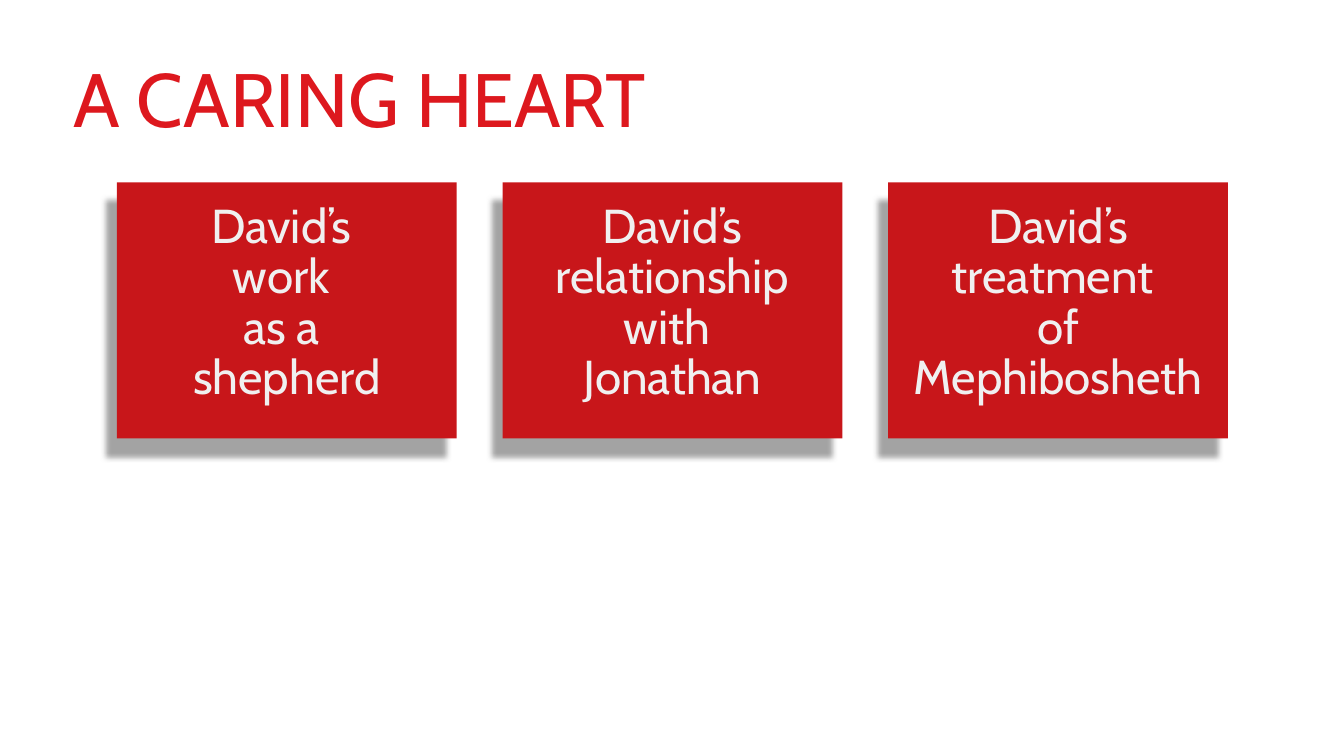
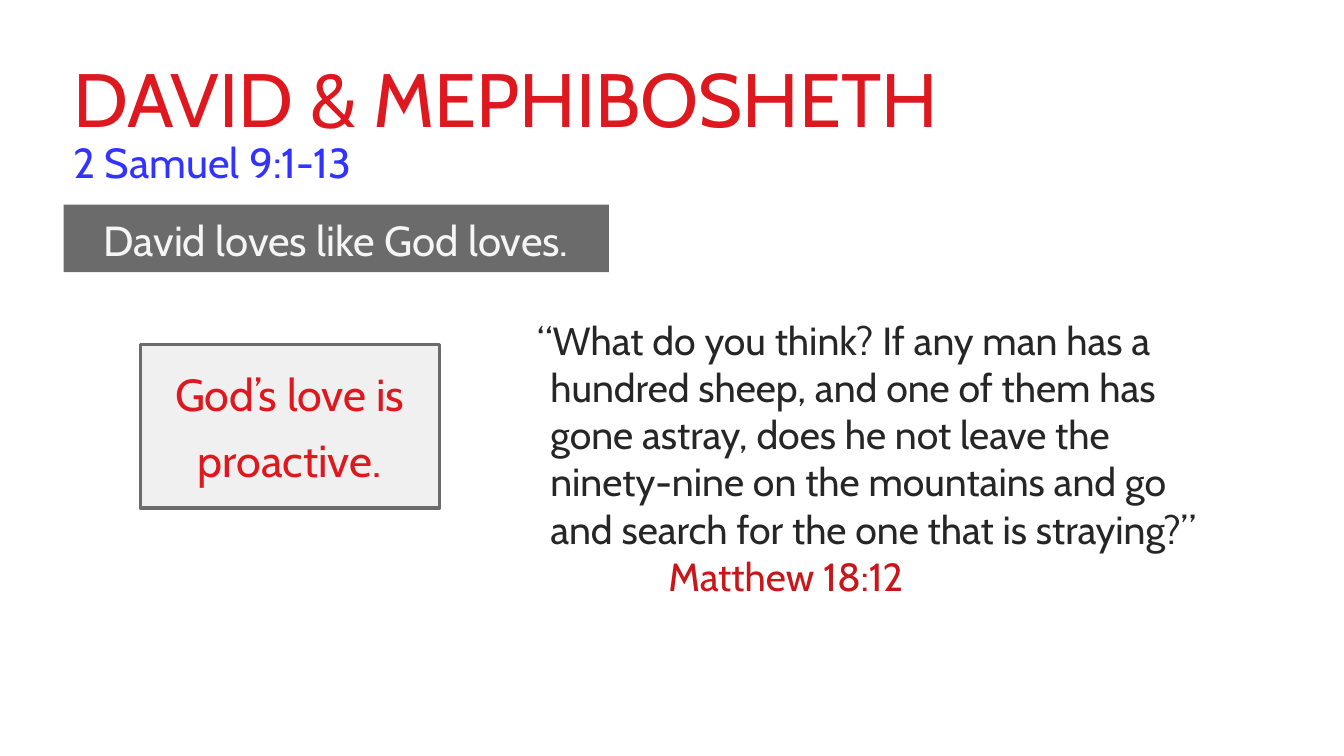
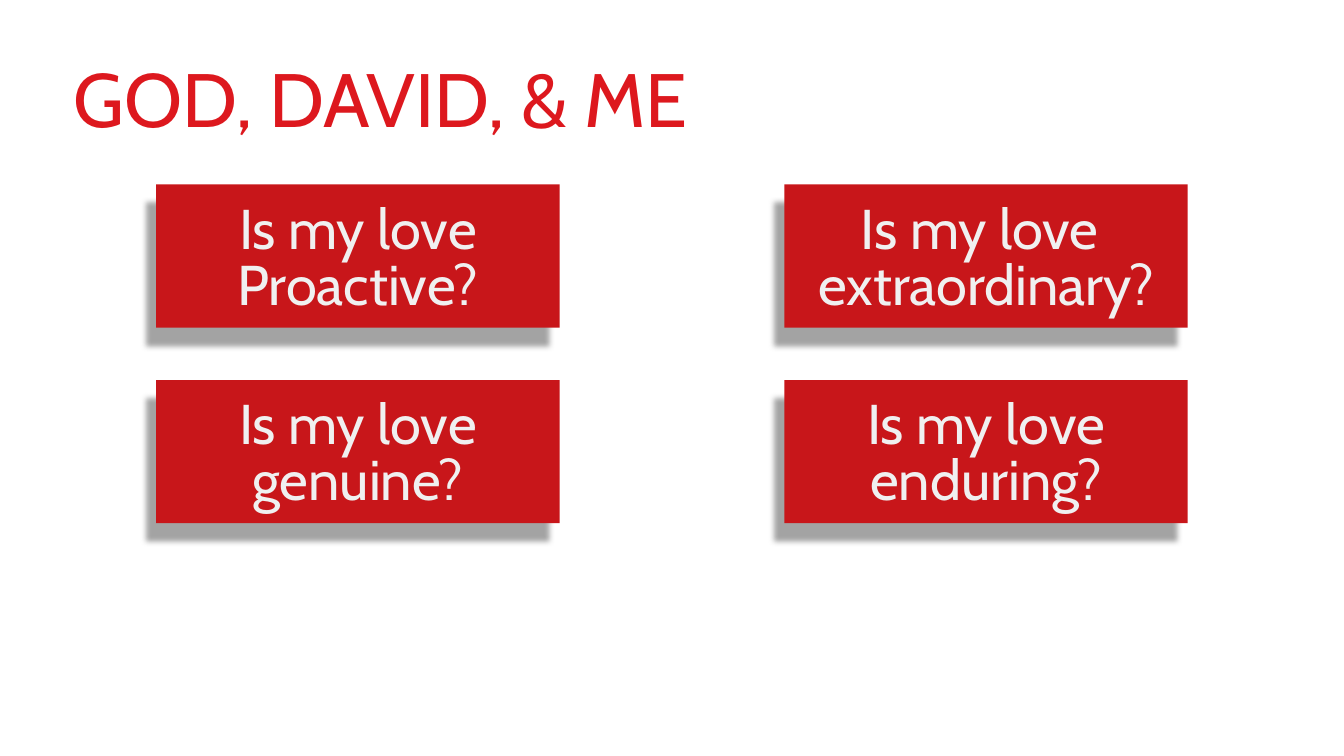
from lxml import etree
from pptx import Presentation
from pptx.dml.color import RGBColor
from pptx.enum import shapes, text
from pptx.oxml import ns
from pptx.util import Inches, Pt

FONT = "Cabin"
RED, DEEP, BLUE = "DD181E", "C8161A", "3333FF"
GREY, PALE, WHITE, INK = "6B6B6B", "F0F0F0", "F5F5F5", "262626"


def color(code):
    return RGBColor.from_string(code)


def write(shape, paras, top=0.1, **common):
    """Fill a shape with paragraphs given as (text, format values)."""
    frame = shape.text_frame
    look = dict(word_wrap=True, vertical_anchor=text.MSO_ANCHOR.TOP,
                margin_left=Inches(0.1), margin_right=Inches(0.1),
                margin_top=Inches(top), margin_bottom=Inches(0.05))
    for key, value in look.items():
        setattr(frame, key, value)
    for i, (words, own) in enumerate(paras):
        fmt = {**common, **own}
        para = frame.add_paragraph() if i else frame.paragraphs[0]
        para.text = words
        para.alignment = fmt.get("align", text.PP_ALIGN.LEFT)
        if "lead" in fmt:
            para.line_spacing = Pt(fmt["lead"])
        if "indent" in fmt:
            left, first = fmt["indent"]
            props = para._p.get_or_add_pPr()
            props.set("marL", str(Inches(left)))
            props.set("indent", str(Inches(first)))
        for run in para.runs:
            for key, value in dict(name=FONT, size=Pt(fmt["size"])).items():
                setattr(run.font, key, value)
            run.font.color.rgb = color(fmt["color"])


def label(slide, box, paras, **common):
    write(slide.shapes.add_textbox(*map(Inches, box)), paras, **common)


def panel(slide, box, fill, paras, line=None, **common):
    shape = slide.shapes.add_shape(
        shapes.MSO_SHAPE.RECTANGLE, *map(Inches, box))
    shape.shadow.inherit = False
    shape.fill.solid()
    shape.fill.fore_color.rgb = color(fill)
    if line:
        shape.line.color.rgb = color(line)
        shape.line.width = Pt(2.25)
    else:
        shape.line.fill.background()
    write(shape, paras, align=text.PP_ALIGN.CENTER, **common)
    return shape


def card(slide, box, lines, size, lead):
    """Red card with a soft shadow to the lower left."""
    shape = panel(slide, box, DEEP, [(words, {}) for words in lines],
                  top=0.2, size=size, lead=lead, color=PALE)
    effects = shape._element.spPr.find(ns.qn("a:effectLst"))
    shade = etree.SubElement(
        effects, ns.qn("a:outerShdw"), blurRad=str(Pt(4)), dist=str(Pt(15)),
        dir=str(120 * 60000), algn="ctr", rotWithShape="0")
    tint = etree.SubElement(shade, ns.qn("a:srgbClr"), val="595959")
    etree.SubElement(tint, ns.qn("a:alpha"), val="55000")


def grid(slide, box, step, cols, cards, size, lead):
    """Lay equal cards out row by row from the first card's box."""
    left, top, wide, high = box
    for i, lines in enumerate(cards):
        row, col = divmod(i, cols)
        spot = (left + col * step[0], top + row * step[1], wide, high)
        card(slide, spot, lines, size, lead)


def page(deck, title, verse=None):
    """Add a blank slide with the shared title and an optional verse."""
    slide = deck.slides.add_slide(deck.slide_layouts[6])
    paras = [(title, dict(size=54, color=RED))]
    if verse:
        paras.append((verse, dict(size=30, color=BLUE, lead=31)))
    label(slide, (0.63, 0.47, 9.84, 1.45 if verse else 1.01), paras, top=0.05)
    return slide


def heart(deck):
    slide = page(deck, "A CARING HEART")
    cards = [["David’s \nwork \nas a \nshepherd"],
             ["David’s relationship with \nJonathan"],
             ["David’s treatment \nof Mephibosheth"]]
    grid(slide, (1.16, 1.81, 3.37, 2.54), (3.825, 0), 3, cards, 34, 36)


def story(deck):
    slide = page(deck, "DAVID & MEPHIBOSHETH", "2 Samuel 9:1-13")
    # Theme band and key point
    panel(slide, (0.63, 2.03, 5.41, 0.67), GREY,
          [("David loves like God loves.", {})],
          size=30, lead=36, color=WHITE)
    panel(slide, (1.39, 3.42, 2.97, 1.62), PALE,
          [("God’s love is proactive.", {})],
          line=GREY, size=32, lead=47, color=RED)
    # Quotation and its source
    quote = ("“What do you think? If any man has a hundred sheep, and one of "
             "them has gone astray, does he not leave the ninety-nine on the "
             "mountains and go and search for the one that is straying?”")
    label(slide, (5.23, 3.04, 6.77, 3.18),
          [(quote, dict(color=INK, indent=(0.13, -0.13))),
           ("Matthew 18:12", dict(color=DEEP, indent=(1.3, 0)))], size=28)


def check(deck):
    slide = page(deck, "GOD, DAVID, & ME")
    cards = [["Is my love", "Proactive?"], ["Is my love ", "extraordinary?"],
             ["Is my love genuine?"], ["Is my love enduring?"]]
    grid(slide, (1.55, 1.83, 4, 1.42), (6.23, 1.94), 2, cards, 40, 40)


def main():
    deck = Presentation()
    deck.slide_width, deck.slide_height = Inches(13.33), Inches(7.5)
    for build in (heart, story, check):
        build(deck)
    deck.save("out.pptx")


if __name__ == "__main__":
    main()
